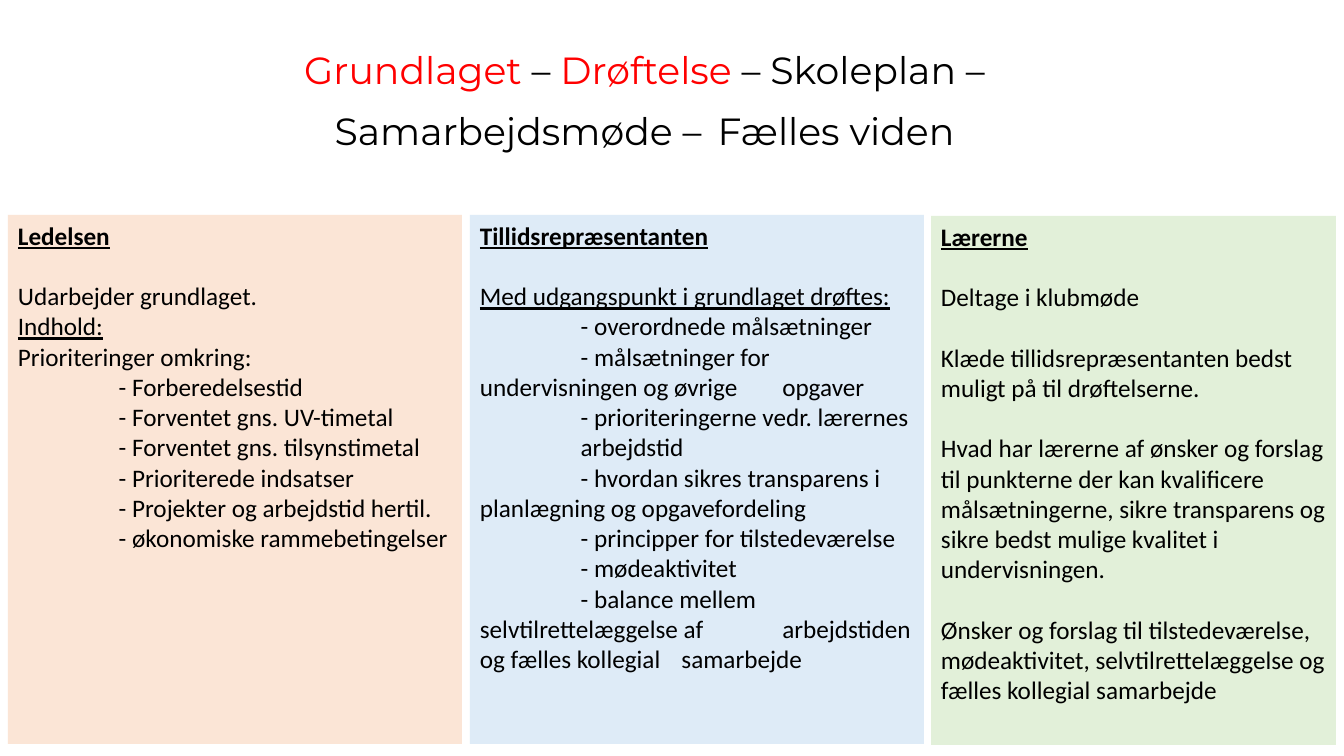
from dataclasses import dataclass

from lxml.etree import SubElement
from pptx import Presentation
from pptx.dml.color import RGBColor
from pptx.enum.shapes import MSO_SHAPE
from pptx.enum.text import MSO_ANCHOR, MSO_AUTO_SIZE, PP_ALIGN
from pptx.oxml.ns import qn
from pptx.slide import Slide
from pptx.text.text import _Paragraph
from pptx.util import Emu, Inches, Pt


def px(length: int) -> Emu:
    return Emu(round(length * 914400 / 100.8))


@dataclass(frozen=True)
class Theme:
    title_font: str = "Montserrat"
    body_font: str = "Calibri"
    title_size: int = 27
    wide_space_size: int = 44
    body_size: int = 18
    section_gap: float = 21.6
    text: str = "000000"
    highlight: str = "FF0000"
    management: str = "FBE5D6"
    representative: str = "DEEBF7"
    teachers: str = "E2F0D9"


THEME = Theme()


@dataclass(frozen=True)
class TitlePart:
    text: str
    color: str = THEME.text
    size: int = THEME.title_size


@dataclass(frozen=True)
class Line:
    text: str
    underline: bool = False
    new_section: bool = False


@dataclass(frozen=True)
class Column:
    left: int
    top: int
    width: int
    fill: str
    heading: str
    lines: tuple[Line, ...]


COLUMN_HEIGHT = 529

TITLE_PARTS = (
    TitlePart("Grundlaget", THEME.highlight),
    TitlePart(" – "),
    TitlePart("Drøftelse", THEME.highlight),
    TitlePart(" – Skoleplan – Samarbejdsmøde –"),
    TitlePart(" ", size=THEME.wide_space_size),
    TitlePart("Fælles viden"),
)

COLUMNS = (
    Column(8, 215, 454, THEME.management, "Ledelsen", (
        Line("Udarbejder grundlaget.", new_section=True),
        Line("Indhold:", underline=True),
        Line("Prioriteringer omkring:"),
        Line("\t- Forberedelsestid"),
        Line("\t- Forventet gns. UV-timetal"),
        Line("\t- Forventet gns. tilsynstimetal"),
        Line("\t- Prioriterede indsatser"),
        Line("\t- Projekter og arbejdstid hertil."),
        Line("\t- økonomiske rammebetingelser"),
    )),
    Column(470, 215, 454, THEME.representative, "Tillidsrepræsentanten", (
        Line("Med udgangspunkt i grundlaget drøftes:", underline=True, new_section=True),
        Line("\t- overordnede målsætninger"),
        Line("\t- målsætninger for \tundervisningen og øvrige \topgaver"),
        Line("\t- prioriteringerne vedr. lærernes \tarbejdstid"),
        Line("\t- hvordan sikres transparens i \tplanlægning og opgavefordeling"),
        Line("\t- principper for tilstedeværelse"),
        Line("\t- mødeaktivitet"),
        Line("\t- balance mellem \tselvtilrettelæggelse af \tarbejdstiden og fælles "
             "kollegial \tsamarbejde"),
    )),
    Column(931, 216, 405, THEME.teachers, "Lærerne", (
        Line("Deltage i klubmøde", new_section=True),
        Line("Klæde tillidsrepræsentanten bedst muligt på til drøftelserne.",
             new_section=True),
        Line("Hvad har lærerne af ønsker og forslag til punkterne der kan kvalificere "
             "målsætningerne, sikre transparens og sikre bedst mulige kvalitet i "
             "undervisningen.", new_section=True),
        Line("Ønsker og forslag til tilstedeværelse, mødeaktivitet, "
             "selvtilrettelæggelse og fælles kollegial samarbejde", new_section=True),
    )),
)


def add_title(slide: Slide) -> None:
    title = slide.shapes.title
    title.left, title.top, title.width, title.height = px(163), px(21), px(963), px(143)
    text_frame = title.text_frame
    text_frame.word_wrap = True
    text_frame.auto_size = MSO_AUTO_SIZE.NONE
    text_frame.vertical_anchor = MSO_ANCHOR.BOTTOM
    paragraph = text_frame.paragraphs[0]
    paragraph.alignment = PP_ALIGN.CENTER
    paragraph.line_spacing = 0.9
    for part in TITLE_PARTS:
        run = paragraph.add_run()
        run.text = part.text
        run.font.name = THEME.title_font
        run.font.size = Pt(part.size)
        run.font.color.rgb = RGBColor.from_string(part.color)


def add_tab_stops(paragraph: _Paragraph) -> None:
    """Place left tab stops at every inch."""
    tab_list = SubElement(paragraph._p.get_or_add_pPr(), qn("a:tabLst"))
    for inch in range(1, 5):
        SubElement(tab_list, qn("a:tab"), pos=str(Inches(inch)), algn="l")


def write_line(paragraph: _Paragraph, line: Line, bold: bool) -> None:
    paragraph.text = line.text
    paragraph.alignment = PP_ALIGN.LEFT
    if line.new_section:
        paragraph.space_before = Pt(THEME.section_gap)
    if "\t" in line.text:
        add_tab_stops(paragraph)
    for run in paragraph.runs:
        run.font.name = THEME.body_font
        run.font.size = Pt(THEME.body_size)
        run.font.color.rgb = RGBColor.from_string(THEME.text)
        run.font.bold = bold
        run.font.underline = line.underline


def add_column(slide: Slide, column: Column) -> None:
    shape = slide.shapes.add_shape(
        MSO_SHAPE.RECTANGLE, px(column.left), px(column.top),
        px(column.width), px(COLUMN_HEIGHT))
    shape.shadow.inherit = False
    shape.fill.solid()
    shape.fill.fore_color.rgb = RGBColor.from_string(column.fill)
    shape.line.fill.background()
    text_frame = shape.text_frame
    text_frame.word_wrap = True
    text_frame.vertical_anchor = MSO_ANCHOR.TOP
    write_line(text_frame.paragraphs[0], Line(column.heading, underline=True), bold=True)
    for line in column.lines:
        write_line(text_frame.add_paragraph(), line, bold=False)


def main() -> None:
    presentation = Presentation()
    presentation.slide_width, presentation.slide_height = px(1344), px(756)
    slide = presentation.slides.add_slide(presentation.slide_layouts.get_by_name("Title Only"))
    add_title(slide)
    for column in COLUMNS:
        add_column(slide, column)
    presentation.save("out.pptx")


if __name__ == "__main__":
    main()
